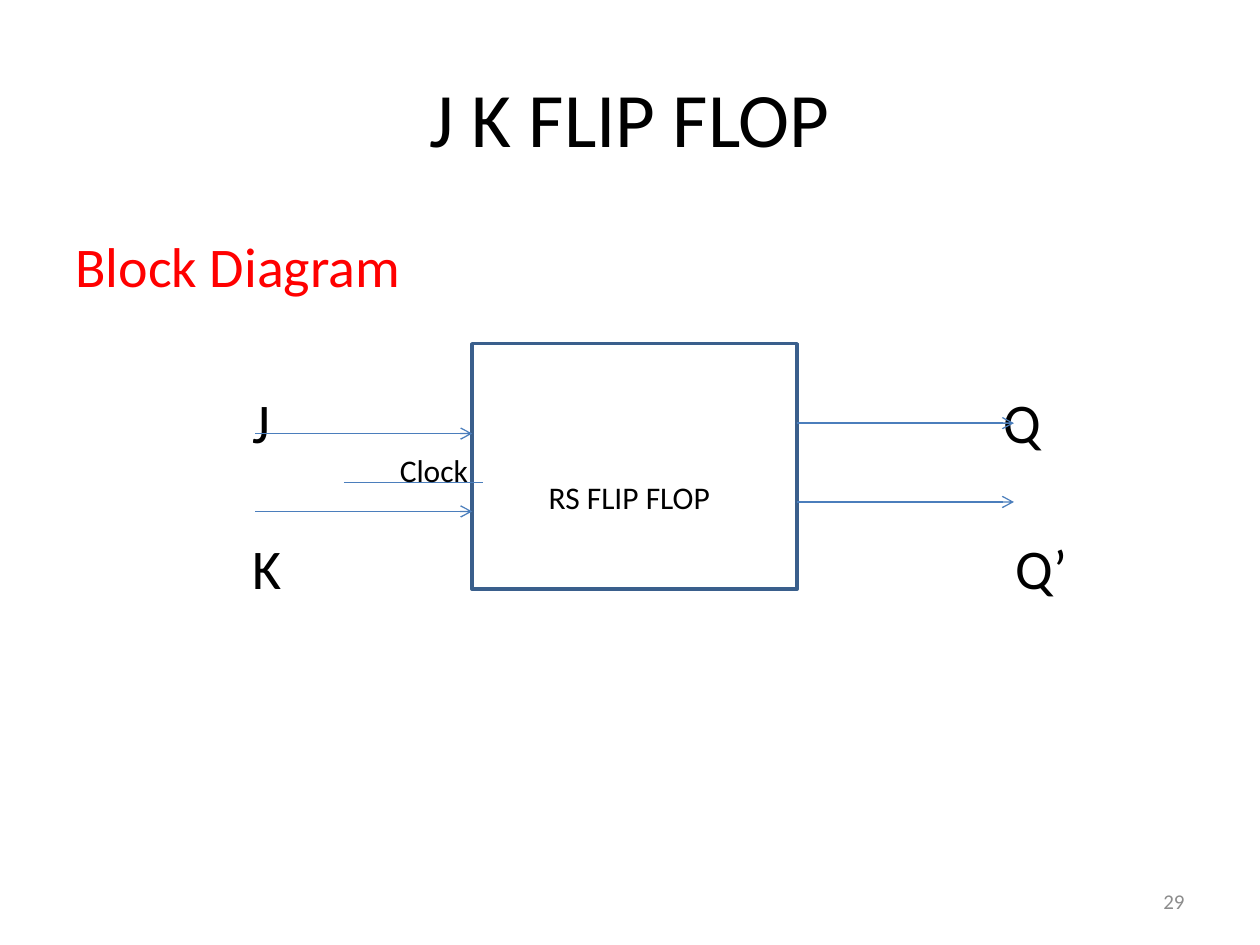
from lxml import etree
from pptx import Presentation
from pptx.dml.color import RGBColor
from pptx.enum.shapes import MSO_CONNECTOR, MSO_SHAPE
from pptx.enum.text import MSO_ANCHOR, PP_ALIGN
from pptx.oxml.ns import qn
from pptx.util import Cm, Pt

COLORS = {"text": "000000", "heading": "FF0000", "number": "8C8C8C",
          "fill": "FFFFFF", "border": "3A5F8C", "wire": "4B7EBC"}

prs = Presentation()
prs.slide_width, prs.slide_height = Cm(25.4), Cm(19.05)
s = prs.slides.add_slide(prs.slide_layouts[6])


def add_text(text, left, middle, width, size=32, color="text", align=PP_ALIGN.LEFT):
    """Add one line of text, centred vertically on middle (lengths in cm)."""
    height = size * 0.05
    sp = s.shapes.add_textbox(Cm(left), Cm(middle - height / 2), Cm(width), Cm(height))
    tf = sp.text_frame
    tf.margin_left = tf.margin_right = tf.margin_top = tf.margin_bottom = 0
    tf.word_wrap = True
    tf.vertical_anchor = MSO_ANCHOR.MIDDLE
    p = tf.paragraphs[0]
    p.alignment = align
    r = p.add_run()
    r.text = text
    r.font.name, r.font.size = "Calibri", Pt(size)
    r.font.color.rgb = RGBColor.from_string(COLORS[color])


def add_wire(left, y, length, arrow=True):
    line = s.shapes.add_connector(MSO_CONNECTOR.STRAIGHT, Cm(left), Cm(y),
                                  Cm(left + length), Cm(y))
    line.line.width = Pt(0.75)
    line.line.color.rgb = RGBColor.from_string(COLORS["wire"])
    if arrow:
        etree.SubElement(line.line._get_or_add_ln(), qn("a:tailEnd"), type="arrow")
    etree.SubElement(line._element.spPr, qn("a:effectLst"))


# Title, heading and pin labels
add_text("J K FLIP FLOP", 1.27, 2.35, 22.86, size=44, align=PP_ALIGN.CENTER)
add_text("Block Diagram", 1.52, 5.34, 12, color="heading")
for label, left, middle in [("J", 5.1, 8.48), ("Q", 20.24, 8.48),
                            ("K", 5.1, 11.43), ("Q’", 20.47, 11.43)]:
    add_text(label, left, middle, 2)

# Flip-flop block
box_left, box_width = 9.52, 6.55
block = s.shapes.add_shape(MSO_SHAPE.RECTANGLE, Cm(box_left), Cm(6.93),
                           Cm(box_width), Cm(4.95))
block.shadow.inherit = False
block.fill.solid()
block.fill.fore_color.rgb = RGBColor.from_string(COLORS["fill"])
block.line.color.rgb = RGBColor.from_string(COLORS["border"])
block.line.width = Pt(2)
add_text("RS FLIP FLOP", 11.06, 10.02, 4.5, size=18)

# Inputs, outputs and clock
wire_length = 4.37
for y in (8.74, 10.31):
    add_wire(box_left - wire_length, y, wire_length)
for y in (8.53, 10.12):
    add_wire(box_left + box_width, y, wire_length)
add_wire(6.93, 9.73, 2.8, arrow=False)
add_text("Clock", 8.06, 9.47, 2.4, size=18)

# Slide number
add_text("29", 18.2, 18.16, 5.68, size=12, color="number", align=PP_ALIGN.RIGHT)

prs.save("out.pptx")
